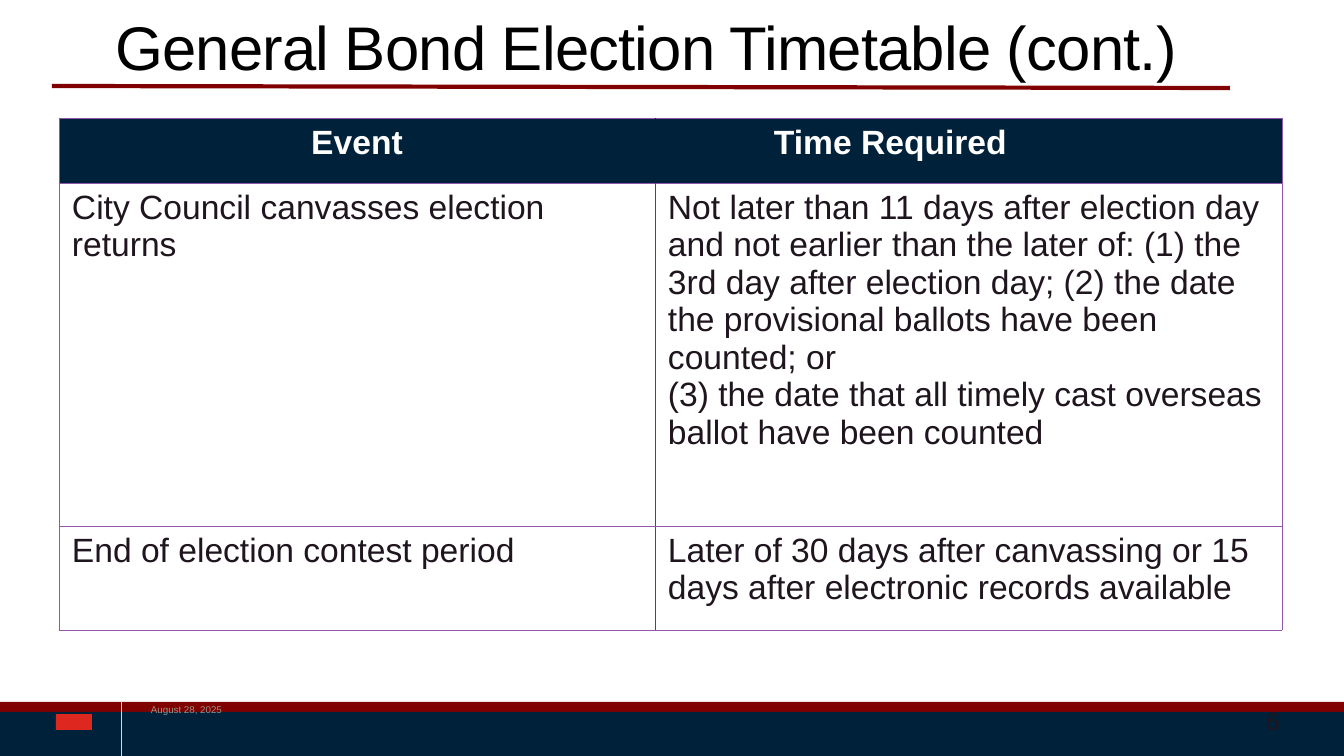
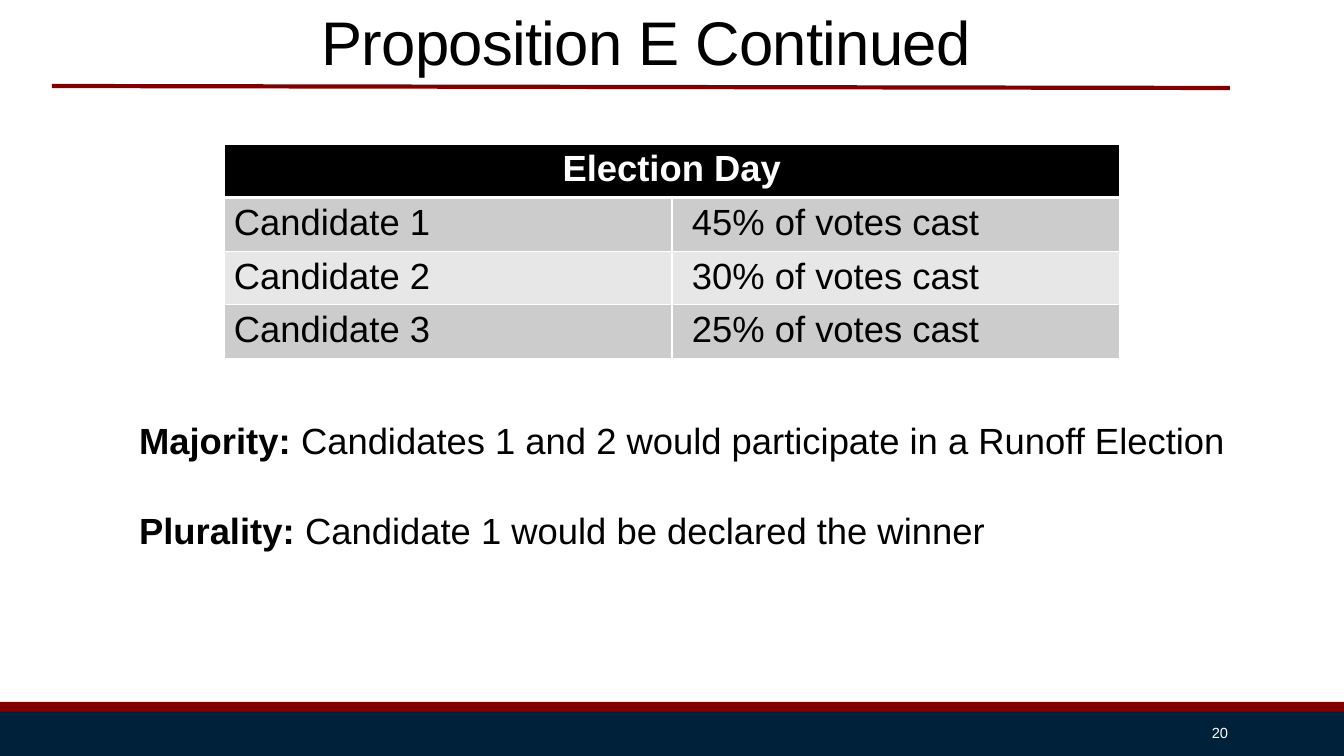
from lxml.etree import SubElement
from pptx import Presentation
from pptx.dml.color import RGBColor
from pptx.enum.shapes import MSO_CONNECTOR as Connector, MSO_SHAPE as Shape
from pptx.enum.text import MSO_ANCHOR as Anchor, PP_ALIGN as Align
from pptx.oxml.ns import qn
from pptx.util import Emu, Pt

PX = 914400 / 100.8  # EMU in one px
WIDTH, HEIGHT = 1344, 756
FONT = "Arial"

WHITE = RGBColor(0xFF, 0xFF, 0xFF)
BLACK = RGBColor(0x00, 0x00, 0x00)
MAROON = RGBColor(0x80, 0x00, 0x00)
NAVY = RGBColor(0x00, 0x21, 0x3A)
INK = RGBColor(0x1F, 0x15, 0x1E)
PURPLE = RGBColor(0x8F, 0x58, 0xAA)
DIVIDER = RGBColor(0x50, 0x48, 0x58)
PALE_GREY = RGBColor(0xD9, 0xD9, 0xD9)
DATE_GREY = RGBColor(0x9A, 0x92, 0x88)
LOGO_RED = RGBColor(0xDD, 0x27, 0x1F)
BANDS = (RGBColor(0xCC, 0xCC, 0xCC), RGBColor(0xE7, 0xE7, 0xE7))


def px(*lengths):
    return [Emu(round(length * PX)) for length in lengths]


def add_block(slide, box, color):
    shape = slide.shapes.add_shape(Shape.RECTANGLE, *px(*box))
    shape.shadow.inherit = False
    shape.fill.solid()
    shape.fill.fore_color.rgb = color
    shape.line.fill.background()


def add_line(slide, ends, color, weight):
    line = slide.shapes.add_connector(Connector.STRAIGHT, *px(*ends))
    line.line.color.rgb = color
    line.line.width = Pt(weight)
    SubElement(line._element.spPr, qn("a:effectLst"))


def write(frame, paragraphs, size, color, bold=None, align=Align.LEFT,
          tracking=0, gap=0, line_spacing=None):
    """Each paragraph is a string or a (bold lead, rest) pair."""
    for index, content in enumerate(paragraphs):
        paragraph = frame.add_paragraph() if index else frame.paragraphs[0]
        paragraph.alignment = align
        if index and gap:
            paragraph.space_before = Pt(gap)
        if line_spacing:
            paragraph.line_spacing = line_spacing
        font = paragraph.font
        font.name, font.size, font.bold = FONT, Pt(size), bold
        font.color.rgb = color
        if tracking:
            properties = paragraph._p.get_or_add_pPr().get_or_add_defRPr()
            properties.set("spc", str(round(tracking * 100)))
        if isinstance(content, str):
            paragraph.add_run().text = content
        else:
            lead, rest = content
            run = paragraph.add_run()
            run.text, run.font.bold = lead, True
            paragraph.add_run().text = rest


def set_margins(target, margins):
    (target.margin_left, target.margin_top,
     target.margin_right, target.margin_bottom) = px(*margins)


def add_text(slide, box, paragraphs, size, color, margins=(0, 1, 0, 0),
             anchor=Anchor.TOP, wrap=True, **style):
    frame = slide.shapes.add_textbox(*px(*box)).text_frame
    frame.word_wrap = wrap
    frame.vertical_anchor = anchor
    set_margins(frame, margins)
    write(frame, paragraphs, size, color, **style)


def add_plain_table(slide, left, top, columns, rows):
    frame = slide.shapes.add_table(
        len(rows), len(columns), *px(left, top, sum(columns), sum(rows)))
    table = frame.table
    table.first_row = table.horz_banding = False
    for column, width in zip(table.columns, px(*columns)):
        column.width = width
    for row, height in zip(table.rows, px(*rows)):
        row.height = height
    return table


def set_borders(cell, **sides):
    """Sides L, R, T, B each take (color, points); call before filling."""
    properties = cell._tc.get_or_add_tcPr()
    for side in "LRTB":
        color, weight = sides[side]
        line = SubElement(properties, qn(f"a:ln{side}"), w=str(Pt(weight)))
        fill = SubElement(line, qn("a:solidFill"))
        SubElement(fill, qn("a:srgbClr"), val=str(color))


def style_cell(cell, fill, margins, borders):
    set_borders(cell, **borders)
    cell.fill.solid()
    cell.fill.fore_color.rgb = fill
    set_margins(cell, margins)


def new_slide(presentation, title, title_bottom, line_spacing, tracking):
    slide = presentation.slides.add_slide(presentation.slide_layouts[6])
    # Footer bands and title rule
    add_block(slide, (0, 702, WIDTH, 50), MAROON)
    add_block(slide, (0, 712, WIDTH, 44), NAVY)
    add_line(slide, (52, 86, 1230, 88), MAROON, 3)
    add_text(slide, (54, 1, 1184, 82), [title], 44, BLACK,
             margins=(0, 0, 0, title_bottom), anchor=Anchor.BOTTOM,
             align=Align.CENTER, line_spacing=line_spacing, tracking=tracking)
    return slide


def add_timetable(slide):
    rows = [
        (["Event"], ["Time Required"]),
        (["City Council canvasses election returns"],
         ["Not later than 11 days after election day and not earlier than "
          "the later of: (1) the 3rd day after election day; (2) the date "
          "the provisional ballots have been counted; or",
          "(3) the date that all timely cast overseas ballot have been "
          "counted"]),
        (["End of election contest period"],
         ["Later of 30 days after canvassing or 15 days after electronic "
          "records available"]),
    ]
    table = add_plain_table(slide, 59, 118, (596, 627), (65, 343, 104))
    outer = (PURPLE, 0.5)
    for r, row in enumerate(rows):
        header = r == 0
        inner = (NAVY if header else DIVIDER, 0.5)
        for c, paragraphs in enumerate(row):
            cell = table.cell(r, c)
            indent = (0, 119)[c] if header else 13
            style_cell(cell, NAVY if header else WHITE, (indent, 6, 0, 0),
                       dict(L=inner if c else outer, R=outer if c else inner,
                            T=outer, B=outer))
            centred = header and c == 0
            write(cell.text_frame, paragraphs, 24, WHITE if header else INK,
                  bold=header, align=Align.CENTER if centred else Align.LEFT)


def add_results(slide):
    results = [("Candidate 1", "45% of votes cast"),
               ("Candidate 2", "30% of votes cast"),
               ("Candidate 3", "25% of votes cast")]
    table = add_plain_table(slide, 224, 144, (448, 448), [50] * 4)
    thin, thick = (WHITE, 1), (WHITE, 3)
    table.cell(0, 0).merge(table.cell(0, 1))
    for c in range(2):
        style_cell(table.cell(0, c), BLACK, (10, 5, 10, 5),
                   dict(L=thin, R=thin, T=thin, B=thick))
    write(table.cell(0, 0).text_frame, ["Election Day"], 26, WHITE,
          bold=True, align=Align.CENTER)
    for r, row in enumerate(results, 1):
        for c, text in enumerate(row):
            cell = table.cell(r, c)
            style_cell(cell, BANDS[(r - 1) % 2], ((10, 20)[c], 5, 10, 5),
                       dict(L=thin, R=thin, T=thick if r == 1 else thin,
                            B=thin))
            write(cell.text_frame, [text], 26, BLACK, bold=False)


def build_timetable_slide(presentation):
    slide = new_slide(presentation, "General Bond Election Timetable (cont.)",
                      0, None, -0.6)
    # Footer: divider, emblem, date and page number
    add_line(slide, (121, 701, 121, HEIGHT), PALE_GREY, 0.5)
    add_block(slide, (56, 714, 36, 16), LOGO_RED)
    add_text(slide, (151, 703, 75, 14), ["August 28, 2025"], 7, DATE_GREY)
    add_timetable(slide)
    add_text(slide, (1266, 704, 17, 33), ["6"], 18, INK)


def build_proposition_slide(presentation):
    slide = new_slide(presentation, "Proposition E Continued", 5, 0.85, -0.5)
    add_text(slide, (1094, 713, 144, 40), ["20"], 10.5, WHITE,
             margins=(10, 5, 10, 5), anchor=Anchor.MIDDLE, align=Align.RIGHT)
    add_results(slide)
    # Outcome under each voting rule
    outcomes = [
        ("Majority:",
         " Candidates 1 and 2 would participate in a Runoff Election"),
        ("Plurality:", " Candidate 1 would be declared the winner"),
    ]
    add_text(slide, (129, 413, 1119, 142), outcomes, 26, BLACK,
             margins=(10, 5, 10, 5), wrap=False, gap=33)


def main():
    presentation = Presentation()
    presentation.slide_width, presentation.slide_height = px(WIDTH, HEIGHT)
    build_timetable_slide(presentation)
    build_proposition_slide(presentation)
    presentation.save("out.pptx")


if __name__ == "__main__":
    main()
